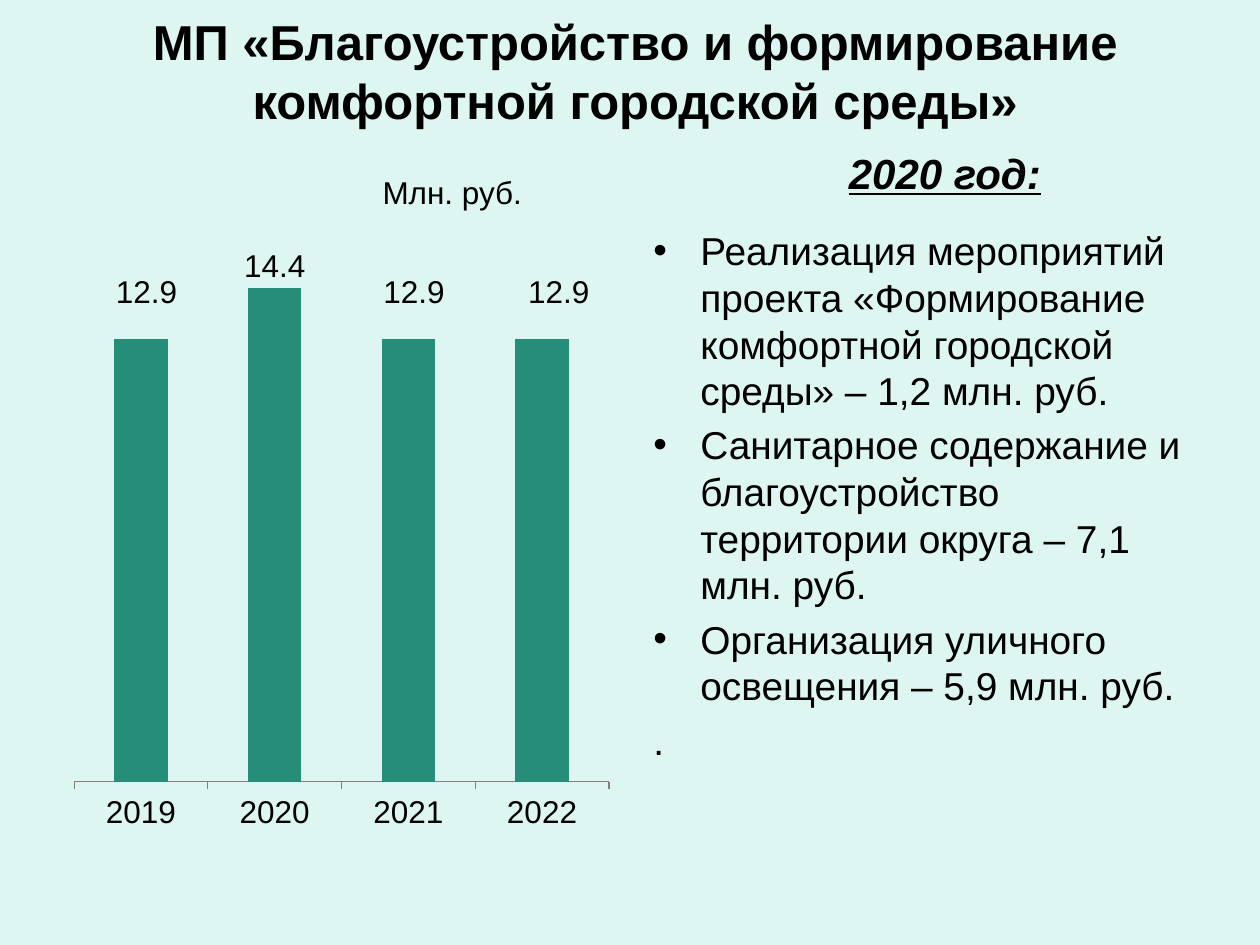
from lxml.etree import SubElement, Element
from pptx import Presentation
from pptx.chart.data import CategoryChartData as Data
from pptx.dml.color import RGBColor
from pptx.enum.chart import XL_CHART_TYPE as Kind, XL_LABEL_POSITION as Spot
from pptx.enum.chart import XL_TICK_MARK as Tick
from pptx.enum.text import MSO_ANCHOR as Anchor, MSO_AUTO_SIZE as Auto, PP_ALIGN as Align
from pptx.oxml.ns import qn
from pptx.util import Cm, Pt

INK, BACK, GREEN, GREY = "000000", "DEF6F1", "268E78", "808080"
C15 = "http://schemas.microsoft.com/office/drawing/2012/chart"
C15_ID = "{CE6537A1-D6FC-4f65-9D91-7224C49458BB}"
YEARS = ["2019", "2020", "2021", "2022"]
SUMS = [12.9, 14.4, 12.9, 12.9]
SHIFTS = [(0.01, -0.43), (0, -0.43), (0.01, -0.43), (0.03, -0.43)]
WORKS = [
    "Реализация мероприятий проекта «Формирование комфортной городской среды» – 1,2 млн. руб.",
    "Санитарное содержание и благоустройство территории округа – 7,1 млн. руб.",
    "Организация уличного освещения – 5,9 млн. руб.",
]
HEAD = {"size": Pt(28), "bold": True}
YEAR = {"size": Pt(24), "bold": True, "italic": True, "underline": True}
NOTE = {"size": Pt(18)}
ITEM = {"size": Pt(22.2)}


def paint(color, code):
    """Set a solid colour from a hex string."""
    color.rgb = RGBColor.from_string(code)


def style(font, look):
    """Apply a dict of format values to a font."""
    for key, value in {"name": "Arial", **look}.items():
        setattr(font, key, value)
    paint(font.color, INK)


def place(shape, box):
    """Move a shape to a box given in centimetres."""
    for key, value in zip(("left", "top", "width", "height"), box):
        setattr(shape, key, Cm(value))


def write(shape, box, text, look):
    """Put one centred paragraph into a shape."""
    place(shape, box)
    frame = shape.text_frame
    frame.word_wrap = True
    frame.auto_size = Auto.NONE
    frame.vertical_anchor = Anchor.MIDDLE
    frame.text = text
    para = frame.paragraphs[0]
    para.alignment = Align.CENTER
    style(para.runs[0].font, look)


def add_text(slide, box, text, look):
    """Add a centred text box."""
    write(slide.shapes.add_textbox(0, 0, 0, 0), box, text, look)


def set_frame(node, kind, spans):
    """Fill a chart layout element with manual values."""
    area = SubElement(node, qn("c:manualLayout"))
    if kind == "plot":
        SubElement(area, qn("c:layoutTarget"), val="inner")
        for key in ("xMode", "yMode"):
            SubElement(area, qn("c:" + key), val="edge")
    for key, value in zip("xywh", spans):
        SubElement(area, qn("c:" + key), val=str(value))


def add_label(bars, index, shift):
    """Show the value of one bar, moved from the bar centre."""
    label = bars.points[index].data_label
    style(label.font, NOTE)
    label.position = Spot.CENTER
    node = bars.data_labels._element.findall(qn("c:dLbl"))[index]
    layout = Element(qn("c:layout"))
    node.insert(1, layout)
    set_frame(layout, "label", shift)


def drop_leads(labels):
    """Switch off the lines from moved labels to their bars."""
    for lead in labels.findall(qn("c:showLeaderLines")):
        labels.remove(lead)
    SubElement(labels, qn("c:showLeaderLines"), val="0")
    exts = SubElement(labels, qn("c:extLst"))
    ext = SubElement(exts, qn("c:ext"), nsmap={"c15": C15}, uri=C15_ID)
    SubElement(ext, "{%s}showLeaderLines" % C15, val="0")


def add_bars(slide, box):
    """Add the column chart of yearly sums."""
    data = Data()
    data.categories = YEARS
    data.add_series("Млн. руб.", SUMS)
    chart = slide.shapes.add_chart(
        Kind.COLUMN_STACKED, *(Cm(v) for v in box), data).chart
    style(chart.font, NOTE)
    chart.has_legend = chart.has_title = False
    plot = chart.plots[0]
    for key, value in {"gap_width": 150, "overlap": 100, "vary_by_categories": False}.items():
        setattr(plot, key, value)

    sums = chart.value_axis
    for key, value in {"visible": False, "has_major_gridlines": False,
                       "minimum_scale": 0, "maximum_scale": 16}.items():
        setattr(sums, key, value)
    years = chart.category_axis
    years.major_tick_mark = Tick.OUTSIDE
    paint(years.format.line.color, GREY)

    bars = plot.series[0]
    bars.format.fill.solid()
    paint(bars.format.fill.fore_color, GREEN)
    bars.data_labels.show_value = True
    for index, shift in enumerate(SHIFTS):
        add_label(bars, index, shift)
    drop_leads(bars.data_labels._element)

    area = chart._chartSpace.chart.plotArea
    layout = area.find(qn("c:layout"))
    if layout is None:
        layout = Element(qn("c:layout"))
        area.insert(0, layout)
    set_frame(layout, "plot", (0.02, 0.02, 0.96, 0.88))


def add_list(slide, box):
    """Add the bulleted list of works with its closing dot."""
    shape = slide.shapes.add_textbox(0, 0, 0, 0)
    place(shape, box)
    frame = shape.text_frame
    frame.word_wrap = True
    for index, text in enumerate(WORKS + ["."]):
        para = frame.paragraphs[0] if index == 0 else frame.add_paragraph()
        para.space_before = Pt(4.4)
        run = para.add_run()
        run.text = text
        style(run.font, ITEM)
        if index < len(WORKS):
            props = para._p.get_or_add_pPr()
            props.set("marL", str(Cm(0.95)))
            props.set("indent", str(-Cm(0.95)))
            SubElement(props, qn("a:buFont"), typeface="Arial")
            SubElement(props, qn("a:buChar"), char="•")


def main():
    """Build the slide and save it."""
    deck = Presentation()
    deck.slide_width, deck.slide_height = Cm(25.4), Cm(19.05)
    slide = deck.slides.add_slide(deck.slide_layouts[5])
    fill = slide.background.fill
    fill.solid()
    paint(fill.fore_color, BACK)
    write(slide.shapes.title, (0.64, 0.64, 24.33, 1.57),
          "МП «Благоустройство и формирование комфортной городской среды»", HEAD)
    add_bars(slide, (1.27, 4.45, 11.23, 12.57))
    add_list(slide, (12.92, 4.45, 11.23, 12.57))
    add_text(slide, (16.51, 2.75, 5.08, 1.47), "2020 год:", YEAR)
    add_text(slide, (7.32, 3.5, 3.6, 0.74), "Млн. руб.", NOTE)
    deck.save("out.pptx")


if __name__ == "__main__":
    main()
